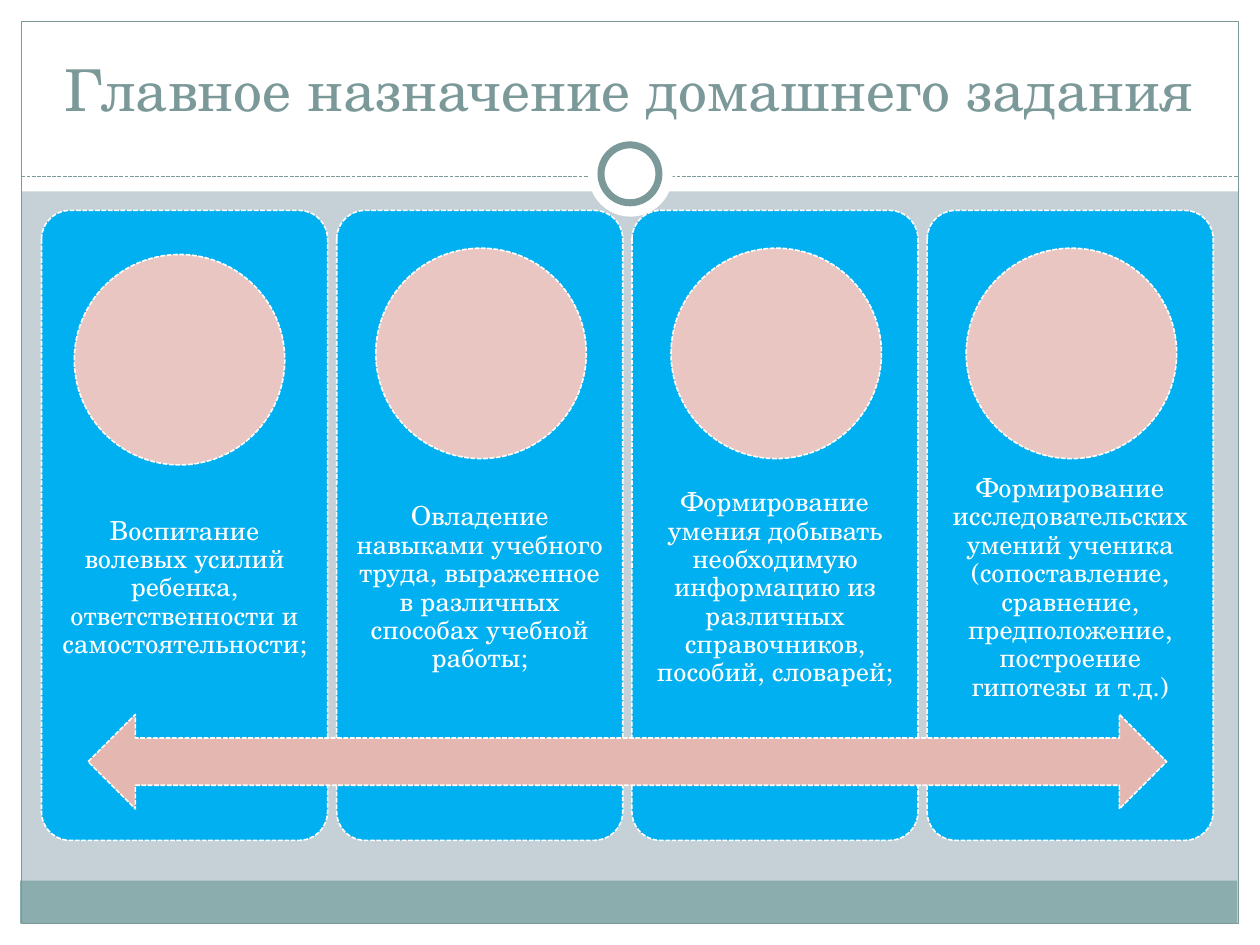
"""Build a slide on the main purpose of homework."""
from dataclasses import dataclass

from lxml.etree import SubElement
from pptx import Presentation
from pptx.dml.color import RGBColor
from pptx.enum.dml import MSO_LINE
from pptx.enum.shapes import MSO_CONNECTOR, MSO_SHAPE
from pptx.enum.text import MSO_ANCHOR, PP_ALIGN
from pptx.oxml.ns import qn
from pptx.util import Inches, Pt


@dataclass(frozen=True)
class Theme:
    font: str = "TeX Gyre Schola"
    title_size: float = 33
    body_size: float = 15
    background: str = "C5D1D7"
    white: str = "FFFFFF"
    accent: str = "7C999A"
    footer: str = "8CADAE"
    card: str = "00B0F0"
    circle: str = "E9C6C1"
    arrow: str = "E5B7B1"


theme = Theme()


def add_figure(shapes, kind, box, fill=None, line=None, width=0.75, dash=None):
    shape = shapes.add_shape(kind, *map(Inches, box))
    shape.shadow.inherit = False
    if fill:
        shape.fill.solid()
        shape.fill.fore_color.rgb = RGBColor.from_string(fill)
    else:
        shape.fill.background()
    if line:
        shape.line.color.rgb = RGBColor.from_string(line)
        shape.line.width = Pt(width)
        shape.line.dash_style = dash
    else:
        shape.line.fill.background()
    return shape


def write_text(frame, text, size, color, anchor, margin=0.1, spacing=1.0, after=0):
    frame.word_wrap = True
    frame.vertical_anchor = anchor
    frame.margin_left = frame.margin_right = Inches(margin)
    frame.margin_top = frame.margin_bottom = Inches(min(margin, 0.12))
    paragraph = frame.paragraphs[0]
    paragraph.alignment = PP_ALIGN.CENTER
    paragraph.line_spacing = spacing
    paragraph.space_before = Pt(0)
    paragraph.space_after = Pt(after)
    run = paragraph.add_run()
    run.text = text
    run.font.name = theme.font
    run.font.size = Pt(size)
    run.font.bold = False
    run.font.color.rgb = RGBColor.from_string(color)


presentation = Presentation()
presentation.slide_width = Inches(10)
presentation.slide_height = Inches(7.5)
slide = presentation.slides.add_slide(presentation.slide_layouts[5])
shapes = slide.shapes
slide.background.fill.solid()
slide.background.fill.fore_color.rgb = RGBColor.from_string(theme.background)

margins = [(0, 7.33, 10, 0.17), (0, 0, 10, 1.52), (0, 0, 0.17, 7.5), (9.83, 0, 0.17, 7.5)]
for box in margins:
    add_figure(shapes, MSO_SHAPE.RECTANGLE, box, fill=theme.white)
add_figure(shapes, MSO_SHAPE.RECTANGLE, (0.16, 6.99, 9.66, 0.34), fill=theme.footer)
add_figure(shapes, MSO_SHAPE.RECTANGLE, (0.17, 0.17, 9.66, 7.16), line=theme.accent)

divider = shapes.add_connector(
    MSO_CONNECTOR.STRAIGHT, Inches(0.17), Inches(1.4), Inches(9.83), Inches(1.4)
)
divider.line.color.rgb = RGBColor.from_string(theme.accent)
divider.line.width = Pt(0.75)
divider.line.dash_style = MSO_LINE.SQUARE_DOT
SubElement(divider.element.spPr, qn("a:effectLst"))

add_figure(shapes, MSO_SHAPE.OVAL, (4.67, 1.05, 0.67, 0.67), fill=theme.white)
add_figure(
    shapes, MSO_SHAPE.OVAL, (4.77, 1.15, 0.46, 0.46),
    fill=theme.white, line=theme.accent, width=4,
)

title = shapes.title
title.left, title.top = Inches(0.33), Inches(0.25)
title.width, title.height = Inches(9.33), Inches(0.83)
write_text(
    title.text_frame, "Главное назначение домашнего задания",
    size=theme.title_size, color=theme.accent, anchor=MSO_ANCHOR.BOTTOM,
)
title.element.getparent().append(title.element)

dashed = {"line": theme.white, "width": 0.9, "dash": MSO_LINE.SQUARE_DOT}
card_left, card_width, card_step = 0.33, 2.27, 2.343
purposes = [
    ("Воспитание волевых усилий ребенка, ответственности и самостоятельности;", 0.26, 2.02),
    ("Овладение навыками учебного труда, выраженное в различных способах учебной работы;",
     0.31, 1.97),
    ("Формирование умения добывать необходимую информацию из различных справочников, "
     "пособий, словарей;", 0.31, 1.97),
    ("Формирование исследовательских умений ученика (сопоставление, сравнение, "
     "предположение, построение гипотезы и т.д.)", 0.31, 1.97),
]
for index, (purpose, circle_offset, circle_top) in enumerate(purposes):
    left = card_left + index * card_step
    card = add_figure(
        shapes, MSO_SHAPE.ROUNDED_RECTANGLE, (left, 1.67, card_width, 5),
        fill=theme.card, **dashed,
    )
    card.adjustments[0] = 0.1
    label = shapes.add_textbox(Inches(left), Inches(3.67), Inches(card_width), Inches(2))
    write_text(
        label.text_frame, purpose, size=theme.body_size, color=theme.white,
        anchor=MSO_ANCHOR.MIDDLE, margin=0.12, spacing=0.9, after=5.25,
    )
    add_figure(
        shapes, MSO_SHAPE.OVAL, (left + circle_offset, circle_top, 1.67, 1.67),
        fill=theme.circle, **dashed,
    )

add_figure(
    shapes, MSO_SHAPE.LEFT_RIGHT_ARROW, (0.7, 5.67, 8.56, 0.75), fill=theme.arrow, **dashed
)

presentation.save("out.pptx")
